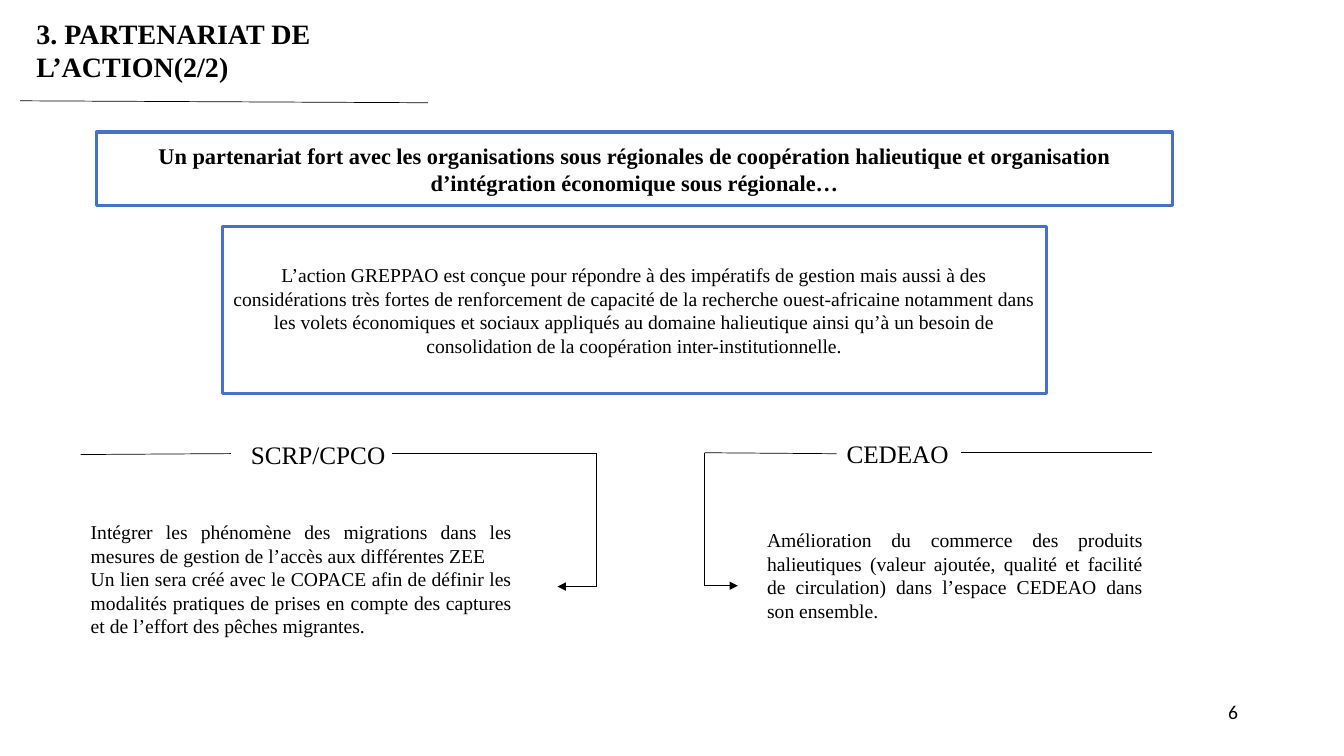
from dataclasses import dataclass
from lxml.etree import SubElement as Sub
from pptx import Presentation
from pptx.dml.color import RGBColor as Rgb
from pptx.enum.shapes import MSO_CONNECTOR as Conn, MSO_SHAPE as Geo
from pptx.enum.text import MSO_ANCHOR as Anchor, MSO_AUTO_SIZE as Auto, PP_ALIGN as Align
from pptx.oxml.ns import qn
from pptx.util import Pt


@dataclass(frozen=True)
class Theme:
    ink: Rgb = Rgb(0, 0, 0)
    paper: Rgb = Rgb(255, 255, 255)
    edge: Rgb = Rgb(0x44, 0x72, 0xC4)
    serif: str = "Times New Roman"
    sans: str = "Calibri"
    title: int = 20
    lead: int = 16
    label: int = 18
    body: int = 14
    thin: float = 0.5
    thick: float = 2.25


T = Theme()


def style(par, size, align=Align.LEFT, bold=False, face=T.serif):
    par.alignment = align
    par.space_before = Pt(0)
    par.line_spacing = 1.0
    font = par.font
    font.name, font.size, font.bold = face, Pt(size), bold
    font.color.rgb = T.ink


def place(shape, box):
    shape.left, shape.top, shape.width, shape.height = map(Pt, box)


def write(shape, texts, size, align=Align.LEFT, bold=False, anchor=Anchor.TOP):
    frame = shape.text_frame
    frame.text = "\n".join(texts)
    frame.word_wrap = True
    frame.auto_size = Auto.NONE
    frame.vertical_anchor = anchor
    for par in frame.paragraphs:
        style(par, size, align, bold)


def line(slide, start, end, arrow=False):
    link = slide.shapes.add_connector(Conn.STRAIGHT, *map(Pt, (*start, *end)))
    link.line.color.rgb = T.ink
    link.line.width = Pt(T.thin)
    if arrow:
        Sub(link.line._get_or_add_ln(), qn("a:tailEnd"), type="triangle")
    Sub(link._element.spPr, qn("a:effectLst"))


# Heading with its rule
def head(slide, box, text):
    x, y, w, h = box
    place(slide.shapes.title, box)
    write(slide.shapes.title, [text], T.title, bold=True)
    line(slide, (x + w, y + 65.5), (x - 4.3, y + 64.1))


# Framed statement
def panel(slide, box, text, size, bold=False):
    rect = slide.shapes.add_shape(Geo.RECTANGLE, *map(Pt, box))
    rect.shadow.inherit = False
    rect.fill.solid()
    rect.fill.fore_color.rgb = T.paper
    rect.line.color.rgb = T.edge
    rect.line.width = Pt(T.thick)
    write(rect, [text], size, Align.CENTER, bold, Anchor.MIDDLE)


# Partner: label between two rules, elbow arrow and body text
def partner(slide, box, name, left, right, label, turn, tip, body, area, texts):
    x, y, w, h = box
    for start, end in (left, right):
        line(slide, (x + start[0], y + start[1]), (x + end[0], y + end[1]))
    line(slide, (x + turn, y), (x + turn, y + h))
    line(slide, (x + turn, y + h), (x + tip, y + h), arrow=True)
    tag = slide.shapes.add_textbox(Pt(x + label), Pt(y - 14), Pt(177), Pt(29))
    write(tag, [name], T.label)
    dx, dy, bw, bh = area
    place(body, (x + dx, y + dy, bw, bh))
    write(body, texts, T.body, Align.JUSTIFY)
    for par in body.text_frame.paragraphs:
        props = par._p.get_or_add_pPr()
        props.set("marL", "0")
        props.set("indent", "0")
        props.insert_element_before(
            props.makeelement(qn("a:buNone"), {}), "a:tabLst", "a:defRPr", "a:extLst")


# Page number
def page(slide, box):
    note = slide.shapes.add_textbox(*map(Pt, box))
    note.text_frame.vertical_anchor = Anchor.MIDDLE
    note.text_frame.word_wrap = True
    par = note.text_frame.paragraphs[0]
    field = Sub(par._p, qn("a:fld"), type="slidenum",
                id="{B6F15528-21DE-4FAA-801E-634DDDAF4B2B}")
    props = Sub(field, qn("a:rPr"), lang="fr-FR", sz=str(T.body * 100))
    Sub(field, qn("a:t")).text = "6"
    style(par, T.body, Align.RIGHT, face=T.sans)
    Sub(props, qn("a:latin"), typeface=T.sans)


def main():
    deck = Presentation()
    deck.slide_width, deck.slide_height = Pt(960), Pt(540)
    deck.element.set("firstSlideNum", "6")
    slide = deck.slides.add_slide(deck.slide_layouts[3])
    first, second = slide.placeholders[1], slide.placeholders[2]

    head(slide, (18.7, 7.9, 287, 55.4), "3. PARTENARIAT DE L’ACTION(2/2)")
    panel(slide, (69.1, 94.3, 768.2, 52.6),
          "Un partenariat fort avec les organisations sous régionales de coopération "
          "halieutique et organisation d’intégration économique sous régionale…",
          T.lead, bold=True)
    panel(slide, (159.1, 162, 588.2, 118.8),
          "L’action GREPPAO est conçue pour répondre à des impératifs de gestion mais "
          "aussi à des considérations très fortes de renforcement de capacité de la "
          "recherche ouest-africaine notamment dans les volets économiques et sociaux "
          "appliqués au domaine halieutique ainsi qu’à un besoin de consolidation de la "
          "coopération inter-institutionnelle.", T.body)
    partner(slide, (57.6, 324, 368.6, 95), "SCRP/CPCO",
            left=((0, 0.7), (107.3, 0)), right=((222.5, 0), (368.6, 0)),
            label=114.5, turn=368.6, tip=340.6,
            body=first, area=(0, 43.9, 315.4, 92.2), texts=[
                "Intégrer les phénomène des migrations dans les mesures de gestion de "
                "l’accès aux différentes ZEE",
                "Un lien sera créé avec le COPACE afin de définir les modalités pratiques "
                "de prises en compte des captures et de l’effort des pêches migrantes."])
    partner(slide, (503.3, 323.4, 319.7, 95), "CEDEAO",
            left=((0, 0), (94.3, 0.7)), right=((182.9, 0), (319.7, 0)),
            label=94.3, turn=0, tip=23.8,
            body=second, area=(37.4, 50.3, 283, 74.9), texts=[
                "Amélioration du commerce des produits halieutiques (valeur ajoutée, "
                "qualité et facilité de circulation) dans l’espace CEDEAO dans son "
                "ensemble."])
    page(slide, (675.4, 493.9, 216, 28.8))
    deck.save("out.pptx")


if __name__ == "__main__":
    main()
